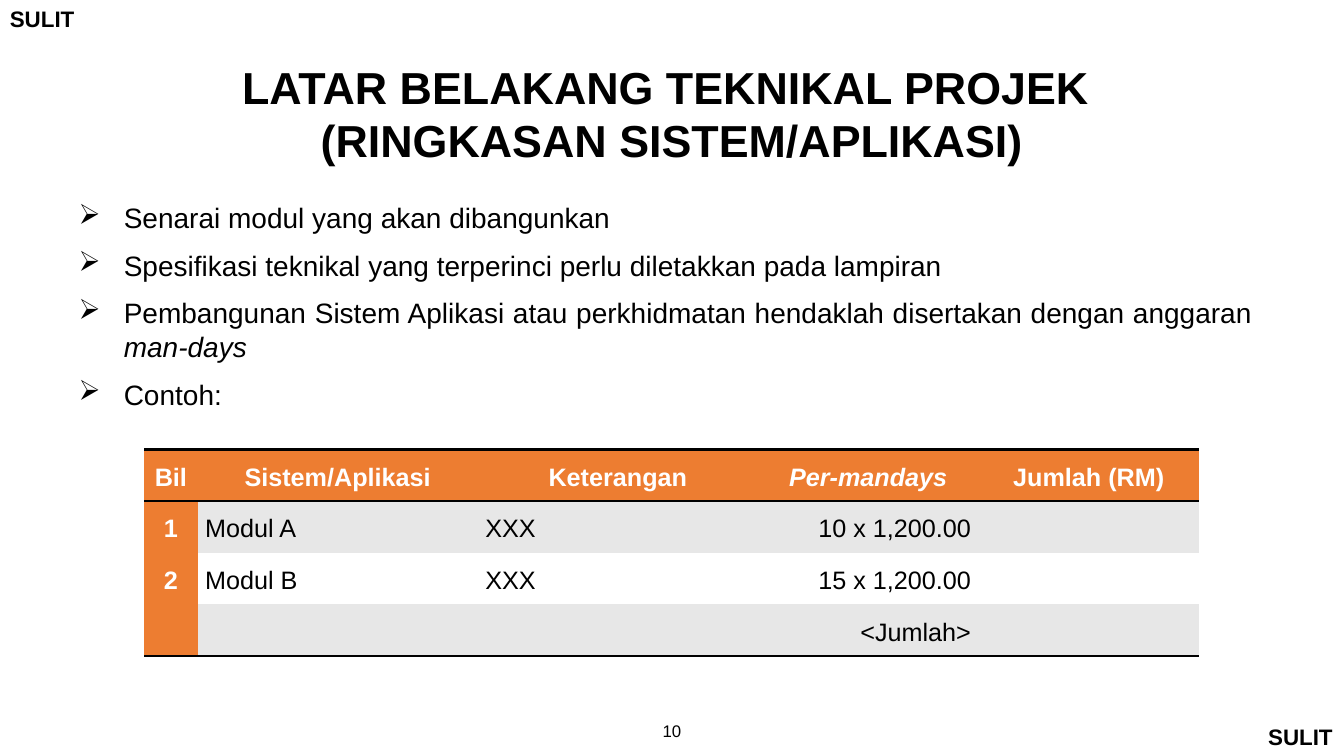
from dataclasses import dataclass

from lxml.etree import SubElement
from pptx import Presentation
from pptx.dml.color import RGBColor
from pptx.enum.text import MSO_ANCHOR, PP_ALIGN
from pptx.oxml.ns import qn
from pptx.util import Cm, Pt


@dataclass(frozen=True)
class Theme:
    font: str = "Arial"
    black: str = "000000"
    white: str = "FFFFFF"
    orange: str = "ED7D31"
    grey: str = "E7E7E7"
    title: int = 32
    body: int = 20
    cell: int = 18
    mark: int = 16
    number: int = 12


THEME = Theme()
PLAIN_TABLE_STYLE = "{2D5ABB26-0587-4C30-8999-92F81FD0307C}"
MARK_WIDTH, MARK_HEIGHT = Cm(2.16), Cm(0.94)

BULLETS = [
    ["Senarai modul yang akan dibangunkan"],
    ["Spesifikasi teknikal yang terperinci perlu diletakkan pada lampiran"],
    ["Pembangunan Sistem Aplikasi atau perkhidmatan hendaklah disertakan dengan anggaran ",
     "man-days"],
    ["Contoh:"],
]
HEADINGS = ["Bil", "Sistem/Aplikasi", "Keterangan", "Per-mandays", "Jumlah (RM)"]
ROWS = [
    HEADINGS,
    ["1", "Modul A", "XXX", "10 x 1,200.00", ""],
    ["2", "Modul B", "XXX", "15 x 1,200.00", ""],
    ["", "", "", "<Jumlah>", ""],
]
COLUMN_WIDTHS = [Cm(1.35), Cm(7.06), Cm(7.06), Cm(5.56), Cm(5.56)]
COLUMN_ALIGNS = [PP_ALIGN.CENTER, PP_ALIGN.LEFT, PP_ALIGN.LEFT, PP_ALIGN.RIGHT, PP_ALIGN.RIGHT]
ITALIC_TEXTS = {"man-days", "Per-mandays"}


def add_span(para, text, *, size, color=THEME.black, bold=False):
    """Append formatted text to a paragraph."""
    span = para.add_run()
    span.text = text
    span.font.name = THEME.font
    span.font.size = Pt(size)
    span.font.bold = bold
    span.font.italic = text in ITALIC_TEXTS
    span.font.color.rgb = RGBColor.from_string(color)


def add_box(page, left, top, width, height, paragraphs, *, align=PP_ALIGN.LEFT,
            wrap=False, bullet=None, **style):
    """Add a text box; each paragraph is a list of texts."""
    box = page.shapes.add_textbox(left, top, width, height)
    frame = box.text_frame
    frame.word_wrap = wrap
    for index, texts in enumerate(paragraphs):
        para = frame.add_paragraph() if index else frame.paragraphs[0]
        para.alignment = align
        if bullet:
            set_bullet(para, bullet)
        for text in texts:
            add_span(para, text, **style)
    return box


def set_bullet(para, symbol):
    para.space_before = Pt(10)
    properties = para._p.get_or_add_pPr()
    properties.set("marL", str(Cm(1.45)))
    properties.set("indent", str(-Cm(1.14)))
    SubElement(properties, qn("a:buChar"), char=symbol)


def add_border(cell, side):
    properties = cell._tc.get_or_add_tcPr()
    line = SubElement(properties, qn(f"a:ln{side}"), w=str(Pt(2)))
    fill = SubElement(line, qn("a:solidFill"))
    SubElement(fill, qn("a:srgbClr"), val=THEME.black)


def fill_cell(cell, text, row, column):
    """Format one cell from its place in the table."""
    is_heading = row == 0
    is_accent = is_heading or column == 0
    # Borders come before the fill in the cell properties
    if is_heading:
        add_border(cell, "T")
    if row in (0, len(ROWS) - 1):
        add_border(cell, "B")
    cell.fill.solid()
    plain = THEME.grey if row % 2 else THEME.white
    cell.fill.fore_color.rgb = RGBColor.from_string(THEME.orange if is_accent else plain)
    cell.vertical_anchor = MSO_ANCHOR.MIDDLE
    cell.margin_left = cell.margin_right = Cm(0.19)
    cell.margin_top = cell.margin_bottom = 0
    if text:
        para = cell.text_frame.paragraphs[0]
        para.alignment = PP_ALIGN.CENTER if is_heading else COLUMN_ALIGNS[column]
        para.line_spacing = 1.15
        para.space_before = Pt(3)
        add_span(para, text, size=THEME.cell, bold=is_accent,
                 color=THEME.white if is_accent else THEME.black)


def add_module_table(page, left, top, row_height):
    frame = page.shapes.add_table(len(ROWS), len(HEADINGS), left, top,
                                  sum(COLUMN_WIDTHS), row_height * len(ROWS))
    table = frame.table
    table._tbl.tblPr.find(qn("a:tableStyleId")).text = PLAIN_TABLE_STYLE
    for column, width in zip(table.columns, COLUMN_WIDTHS):
        column.width = width
    for row, texts in enumerate(ROWS):
        for column, text in enumerate(texts):
            fill_cell(table.cell(row, column), text, row, column)


def main():
    deck = Presentation()
    deck.slide_width, deck.slide_height = Cm(33.87), Cm(19.05)
    page = deck.slides.add_slide(deck.slide_layouts[6])

    # Classification marks in opposite corners
    for left, top in [(0, 0), (deck.slide_width - MARK_WIDTH, deck.slide_height - MARK_HEIGHT)]:
        add_box(page, left, top, MARK_WIDTH, MARK_HEIGHT, [["SULIT"]],
                size=THEME.mark, bold=True)

    # Title
    add_box(page, Cm(5.82), Cm(1.37), Cm(22.23), Cm(2.92),
            [["LATAR BELAKANG TEKNIKAL PROJEK "], ["(RINGKASAN SISTEM/APLIKASI)"]],
            align=PP_ALIGN.CENTER, size=THEME.title, bold=True)

    # Bullets
    add_box(page, Cm(1.42), Cm(4.93), Cm(30.4), Cm(5.99), BULLETS,
            align=PP_ALIGN.JUSTIFY, wrap=True, bullet="➢", size=THEME.body)

    # Module table
    add_module_table(page, Cm(3.63), Cm(11.33), Cm(1.3))

    # Page number
    add_box(page, Cm(16.26), Cm(18.03), Cm(1.35), Cm(1.02), [["10"]],
            align=PP_ALIGN.CENTER, wrap=True, size=THEME.number)

    deck.save("out.pptx")


if __name__ == "__main__":
    main()
